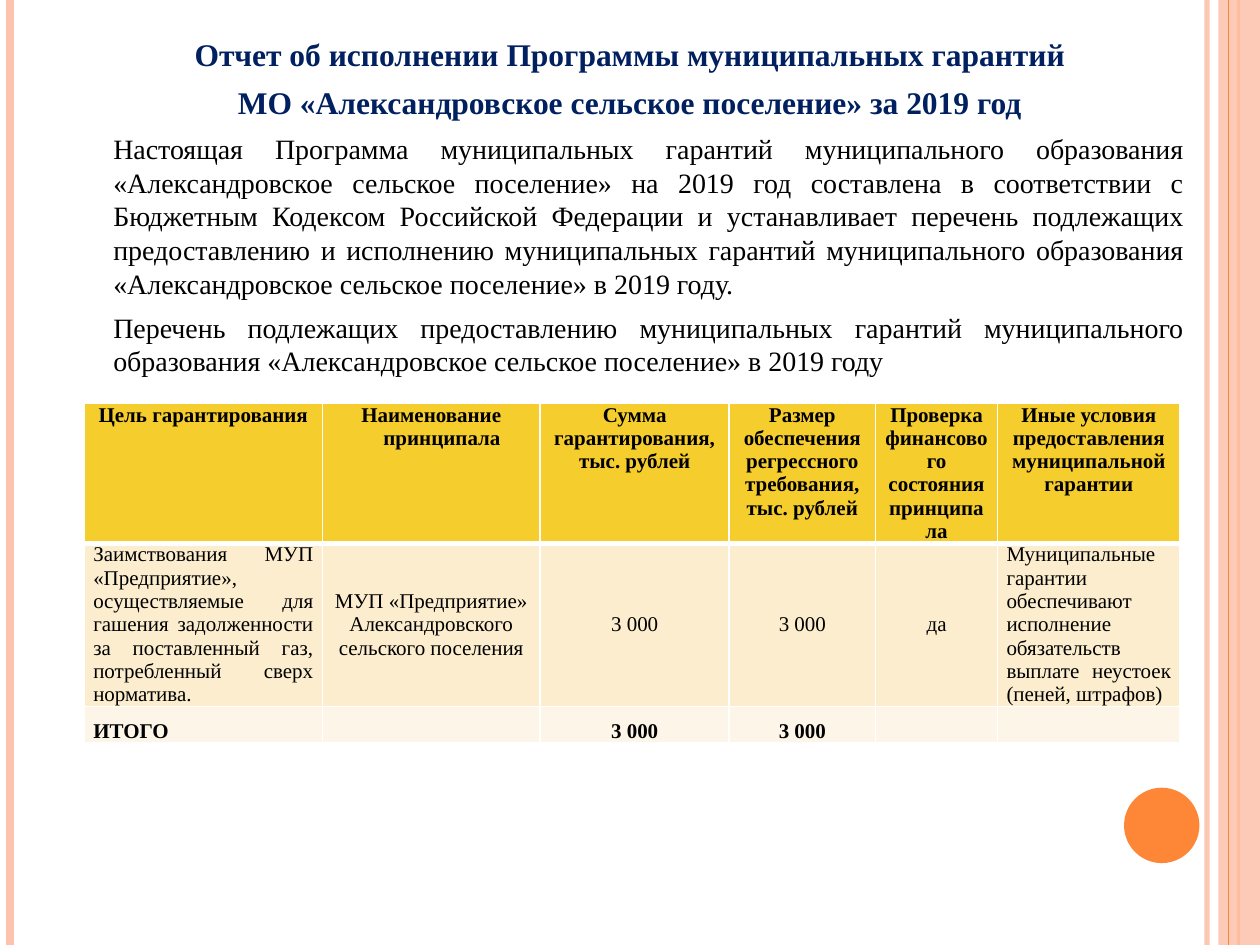
import dataclasses
import typing

import lxml.etree
import pptx
import pptx.dml.color
import pptx.enum.shapes
import pptx.enum.text
import pptx.oxml.ns
import pptx.util

Cm = pptx.util.Cm
Pt = pptx.util.Pt
Rgb = pptx.dml.color.RGBColor
Align = pptx.enum.text.PP_ALIGN
Anchor = pptx.enum.text.MSO_ANCHOR
Kind = pptx.enum.shapes.MSO_SHAPE
qn = pptx.oxml.ns.qn

WHITE = Rgb(0xFF, 0xFF, 0xFF)
BLACK = Rgb(0x00, 0x00, 0x00)
NAVY = Rgb(0x00, 0x20, 0x60)
PEACH = Rgb(0xFE, 0xC3, 0xAE)
ORANGE = Rgb(0xFE, 0x86, 0x37)
GOLD = Rgb(0xF5, 0xCD, 0x2D)
CREAM = Rgb(0xFB, 0xED, 0xCD)
IVORY = Rgb(0xFD, 0xF6, 0xE8)
FONT = "Times New Roman"
WIDTH, HEIGHT = 25.4, 19.05


@dataclasses.dataclass
class Stripe:
    left: float
    width: float
    color: Rgb
    alpha: int = 100


@dataclasses.dataclass
class Para:
    text: str
    size: int
    color: Rgb = BLACK
    bold: bool = False
    align: Align = Align.CENTER


@dataclasses.dataclass
class Cell:
    text: str
    align: Align = Align.CENTER
    anchor: typing.Optional[Anchor] = None
    indent: float = 0


@dataclasses.dataclass
class Row:
    height: float
    fill: Rgb
    bold: bool
    anchor: Anchor
    cells: list[Cell]


STRIPES = [
    Stripe(24.33, 3, PEACH, 93),
    Stripe(0.2, 4.5, PEACH),
    Stripe(24.97, 1.5, ORANGE),
]
EDGE = Stripe(24.77, 0.75, ORANGE)

PARAS = [
    Para("Отчет об исполнении Программы муниципальных гарантий", 18, NAVY, True),
    Para("МО «Александровское сельское поселение» за 2019 год", 18, NAVY, True),
    Para("\tНастоящая Программа муниципальных гарантий муниципального образования "
         "«Александровское сельское поселение» на 2019 год составлена в соответствии "
         "с Бюджетным Кодексом Российской Федерации и устанавливает перечень "
         "подлежащих предоставлению и исполнению муниципальных гарантий "
         "муниципального образования «Александровское сельское поселение» "
         "в 2019 году.", 16, align=Align.JUSTIFY),
    Para("\tПеречень подлежащих предоставлению муниципальных гарантий муниципального "
         "образования «Александровское сельское поселение» в 2019 году",
         16, align=Align.JUSTIFY),
]

COLS = [4.8, 4.39, 3.81, 2.95, 2.46, 3.68]
ROWS = [
    Row(2.79, GOLD, True, Anchor.TOP, [
        Cell("Цель гарантирования"),
        Cell("Наименование принципала", indent=0.43),
        Cell("Сумма гарантирования, тыс. рублей"),
        Cell("Размер обеспечения регрессного требования, тыс. рублей"),
        Cell("Проверка финансового состояния принципала"),
        Cell("Иные условия предоставления муниципальной гарантии"),
    ]),
    Row(3.25, CREAM, False, Anchor.MIDDLE, [
        Cell("Заимствования МУП «Предприятие», осуществляемые для гашения "
             "задолженности за поставленный газ, потребленный сверх норматива.",
             Align.JUSTIFY, Anchor.TOP),
        Cell("МУП «Предприятие» Александровского сельского поселения"),
        Cell("3 000"),
        Cell("3 000"),
        Cell("да"),
        Cell("Муниципальные гарантии обеспечивают исполнение обязательств "
             "выплате неустоек (пеней, штрафов)", Align.JUSTIFY, Anchor.TOP),
    ]),
    Row(0.74, IVORY, True, Anchor.BOTTOM, [
        Cell("ИТОГО", Align.JUSTIFY),
        Cell(""),
        Cell("3 000"),
        Cell("3 000"),
        Cell(""),
        Cell(""),
    ]),
]


def fade(element, alpha: int) -> None:
    color = next(element.iter(qn("a:srgbClr")))
    lxml.etree.SubElement(color, qn("a:alpha"), val=str(alpha * 1000))


def draw_stripe(slide, item: Stripe) -> None:
    line = slide.shapes.add_connector(
        pptx.enum.shapes.MSO_CONNECTOR.STRAIGHT,
        Cm(item.left), 0, Cm(item.left), Cm(HEIGHT))
    line.line.color.rgb = item.color
    line.line.width = Pt(item.width)
    if item.alpha < 100:
        fade(line.element.spPr, item.alpha)
    lxml.etree.SubElement(line.element.spPr, qn("a:effectLst"))


def draw_shape(slide, kind: Kind, box: tuple, color: Rgb):
    shape = slide.shapes.add_shape(kind, *map(Cm, box))
    shape.shadow.inherit = False
    shape.fill.solid()
    shape.fill.fore_color.rgb = color
    shape.line.fill.background()
    return shape


def write(para, text: str, size: int, color: Rgb, bold: bool) -> None:
    run = para.add_run()
    run.text = text
    run.font.name = FONT
    run.font.size = Pt(size)
    run.font.bold = bold
    run.font.color.rgb = color


def hang(para, indent: float):
    props = para._p.get_or_add_pPr()
    props.set("marL", str(Cm(indent)))
    props.set("indent", str(-Cm(indent)))
    return props


def draw_body(slide, body) -> None:
    body.left, body.top, body.width, body.height = map(Cm, (1.27, 0.58, 22.86, 16.43))
    slide.shapes.element.append(body.element)
    frame = body.text_frame
    frame.auto_size = pptx.enum.text.MSO_AUTO_SIZE.NONE
    for index, item in enumerate(PARAS):
        para = frame.add_paragraph() if index else frame.paragraphs[0]
        para.alignment = item.align
        para.space_before = Pt(6)
        lxml.etree.SubElement(hang(para, 0.76), qn("a:buNone"))
        write(para, item.text, item.size, item.color, item.bold)


def frame_cell(cell, top: int, base: int) -> None:
    props = cell._tc.get_or_add_tcPr()
    for side, width in zip("LRTB", (1, 1, top, base)):
        line = lxml.etree.SubElement(props, qn("a:ln" + side), w=str(Pt(width)))
        fill = lxml.etree.SubElement(line, qn("a:solidFill"))
        lxml.etree.SubElement(fill, qn("a:srgbClr"), val=str(WHITE))


def fill_cell(cell, item: Cell, row: Row) -> None:
    cell.margin_left = cell.margin_right = Cm(0.18)
    cell.margin_top = cell.margin_bottom = 0
    cell.vertical_anchor = item.anchor or row.anchor
    cell.fill.solid()
    cell.fill.fore_color.rgb = row.fill
    para = cell.text_frame.paragraphs[0]
    para.alignment = item.align
    para.space_before = Pt(5)
    para.font.size = Pt(12)
    if item.indent:
        hang(para, item.indent)
    if item.text:
        write(para, item.text, 12, BLACK, row.bold)


def draw_table(slide) -> None:
    high = sum(row.height for row in ROWS)
    table = slide.shapes.add_table(
        len(ROWS), len(COLS), Cm(1.7), Cm(8.13), Cm(sum(COLS)), Cm(high)).table
    table.horz_banding = False
    for col, width in zip(table.columns, COLS):
        col.width = Cm(width)
    for r, row in enumerate(ROWS):
        table.rows[r].height = Cm(row.height)
        for c, item in enumerate(row.cells):
            cell = table.cell(r, c)
            frame_cell(cell, 3 if r == 1 else 1, 3 if r == 0 else 1)
            fill_cell(cell, item, row)


def main() -> None:
    deck = pptx.Presentation()
    deck.slide_width, deck.slide_height = Cm(WIDTH), Cm(HEIGHT)
    slide = deck.slides.add_slide(deck.slide_layouts[1])
    title, body = slide.placeholders
    slide.shapes.element.remove(title.element)
    for item in STRIPES:
        draw_stripe(slide, item)
    band = draw_shape(slide, Kind.RECTANGLE, (24.56, 0, 0.84, HEIGHT), PEACH)
    fade(band.element.spPr, 87)
    draw_stripe(slide, EDGE)
    draw_shape(slide, Kind.OVAL, (22.66, 15.88, 1.52, 1.52), ORANGE)
    draw_body(slide, body)
    draw_table(slide)
    deck.save("out.pptx")


if __name__ == "__main__":
    main()
